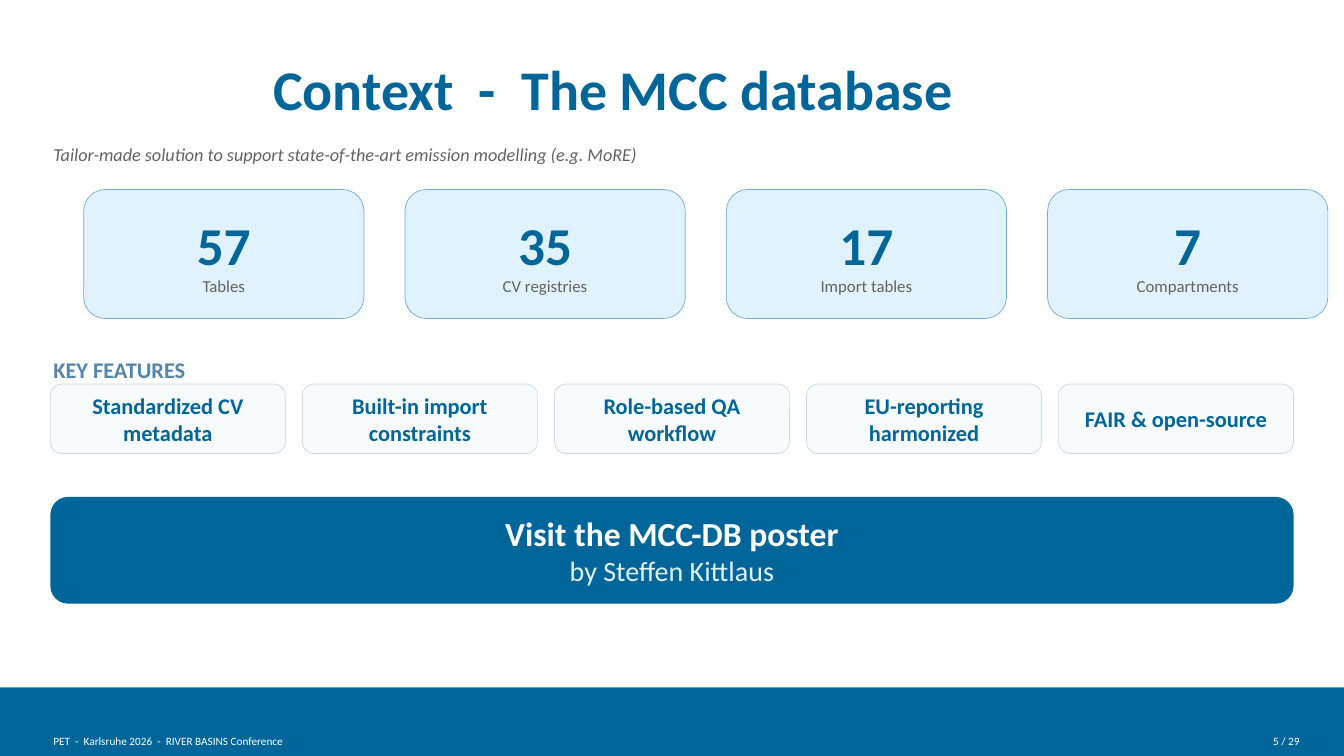
from pptx import Presentation
from pptx.dml.color import RGBColor
from pptx.enum.shapes import MSO_SHAPE as Shape
from pptx.enum.text import MSO_ANCHOR as Anchor, MSO_AUTO_SIZE as Fit, PP_ALIGN as Align
from pptx.util import Inches, Pt

FONT = "Calibri"
COLORS = {
    "blue": "006699", "sky": "DFF2FD", "edge": "72ADD5", "pale": "F7FBFE",
    "rim": "C8DAEA", "steel": "5485AB", "gray": "646363", "white": "FFFFFF",
}
STATS = [("57", "Tables"), ("35", "CV registries"),
         ("17", "Import tables"), ("7", "Compartments")]
FEATURES = ["Standardized CV metadata", "Built-in import constraints",
            "Role-based QA workflow", "EU-reporting harmonized",
            "FAIR & open-source"]


def color(name):
    return RGBColor.from_string(COLORS[name])


def write(shape, lines, pad=(0.03, 0.03), align=Align.LEFT, anchor=Anchor.TOP):
    """Fill a shape with lines of (text, size, color, bold, italic)."""
    frame = shape.text_frame
    frame.word_wrap = True
    frame.auto_size = Fit.NONE
    frame.vertical_anchor = anchor
    frame.margin_left = frame.margin_right = Inches(pad[0])
    frame.margin_top = frame.margin_bottom = Inches(pad[1])
    for i, (text, size, tint, bold, italic) in enumerate(lines):
        para = frame.paragraphs[0] if i == 0 else frame.add_paragraph()
        para.text = text
        para.alignment = align
        font = para.font
        font.name, font.size = FONT, Pt(size)
        font.bold, font.italic = bold, italic
        font.color.rgb = color(tint)


def label(slide, box, text, size, tint, bold=False, italic=False, align=Align.LEFT):
    shape = slide.shapes.add_textbox(*map(Inches, box))
    write(shape, [(text, size, tint, bold, italic)], align=align)


def panel(slide, box, fill, line=None, kind=Shape.ROUNDED_RECTANGLE):
    shape = slide.shapes.add_shape(kind, *map(Inches, box))
    shape.shadow.inherit = False
    shape.fill.solid()
    shape.fill.fore_color.rgb = color(fill)
    if line:
        shape.line.color.rgb = color(line)
        shape.line.width = Pt(0.5)
    else:
        shape.line.fill.background()
    return shape


def header(slide, box):
    left, top, width, height = box
    title = slide.shapes.title
    title.left, title.top = Inches(left + 2.18), Inches(top)
    title.width, title.height = Inches(width - 2.18), Inches(0.73)
    write(title, [("Context  -  The MCC database", 40, "blue", True, False)],
          anchor=Anchor.MIDDLE)
    label(slide, (left, top + 0.88, width, 0.27),
          "Tailor-made solution to support state-of-the-art emission modelling (e.g. MoRE)",
          13, "gray", italic=True)


def cards(slide, box):
    left, top, width, height = box
    wide = 2.78
    step = (width - wide) / (len(STATS) - 1)
    for i, (count, name) in enumerate(STATS):
        card = panel(slide, (left + i * step, top, wide, height), "sky", "edge")
        write(card, [(count, 38, "blue", True, False), (name, 12, "gray", False, False)],
              (0.08, 0.08), Align.CENTER, Anchor.MIDDLE)


def features(slide, box):
    left, top, width, height = box
    label(slide, (left, top, width, 0.33), "KEY FEATURES", 16, "steel", bold=True)
    wide = 2.33
    step = (width - wide) / (len(FEATURES) - 1)
    for i, name in enumerate(FEATURES):
        tile = panel(slide, (left + i * step, top + 0.31, wide, height - 0.31),
                     "pale", "rim")
        write(tile, [(name, 16, "blue", True, False)],
              (0.06, 0.03), Align.CENTER, Anchor.MIDDLE)


def banner(slide, box):
    write(panel(slide, box, "blue"),
          [("Visit the MCC-DB poster", 24, "white", True, False),
           ("by Steffen Kittlaus", 20, "sky", False, False)],
          (0.25, 0.14), Align.CENTER, Anchor.MIDDLE)


def footer(slide, box):
    left, top, width, height = box
    panel(slide, box, "blue", kind=Shape.RECTANGLE)
    label(slide, (left + 0.5, top + 0.43, 6.94, 0.19),
          "PET  -  Karlsruhe 2026  -  RIVER BASINS Conference", 8, "white")
    label(slide, (left + width - 1.52, top + 0.43, 1.11, 0.19),
          "5 / 29", 8, "white", align=Align.RIGHT)


def main():
    deck = Presentation()
    deck.slide_width, deck.slide_height = Inches(13.33), Inches(7.5)
    slide = deck.slides.add_slide(deck.slide_layouts[5])
    header(slide, (0.5, 0.51, 12.33, 1.15))
    cards(slide, (0.83, 1.88, 12.34, 1.28))
    features(slide, (0.5, 3.5, 12.33, 1))
    banner(slide, (0.5, 4.93, 12.33, 1.06))
    footer(slide, (0, 6.82, 13.33, 0.68))
    deck.save("out.pptx")


if __name__ == "__main__":
    main()
